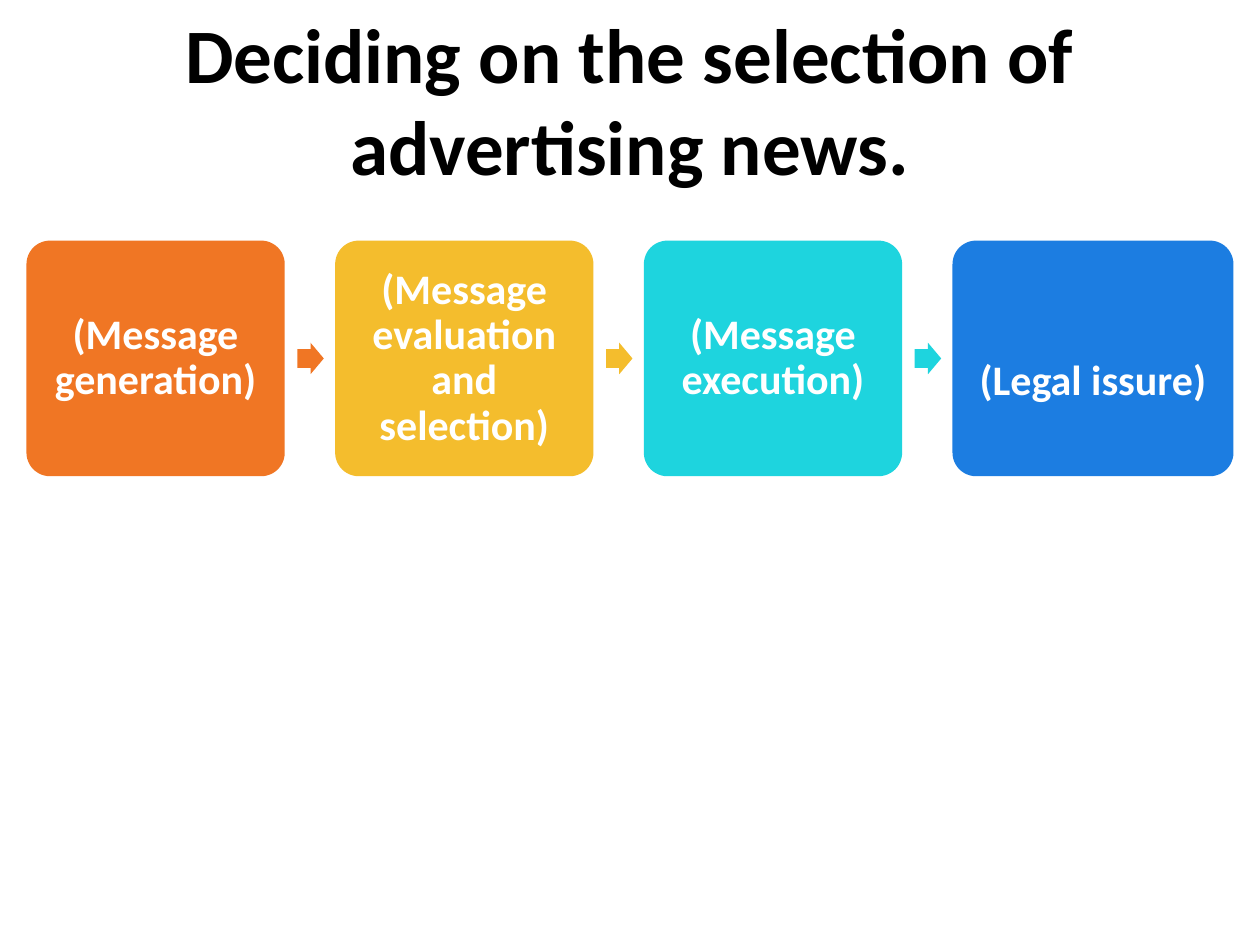
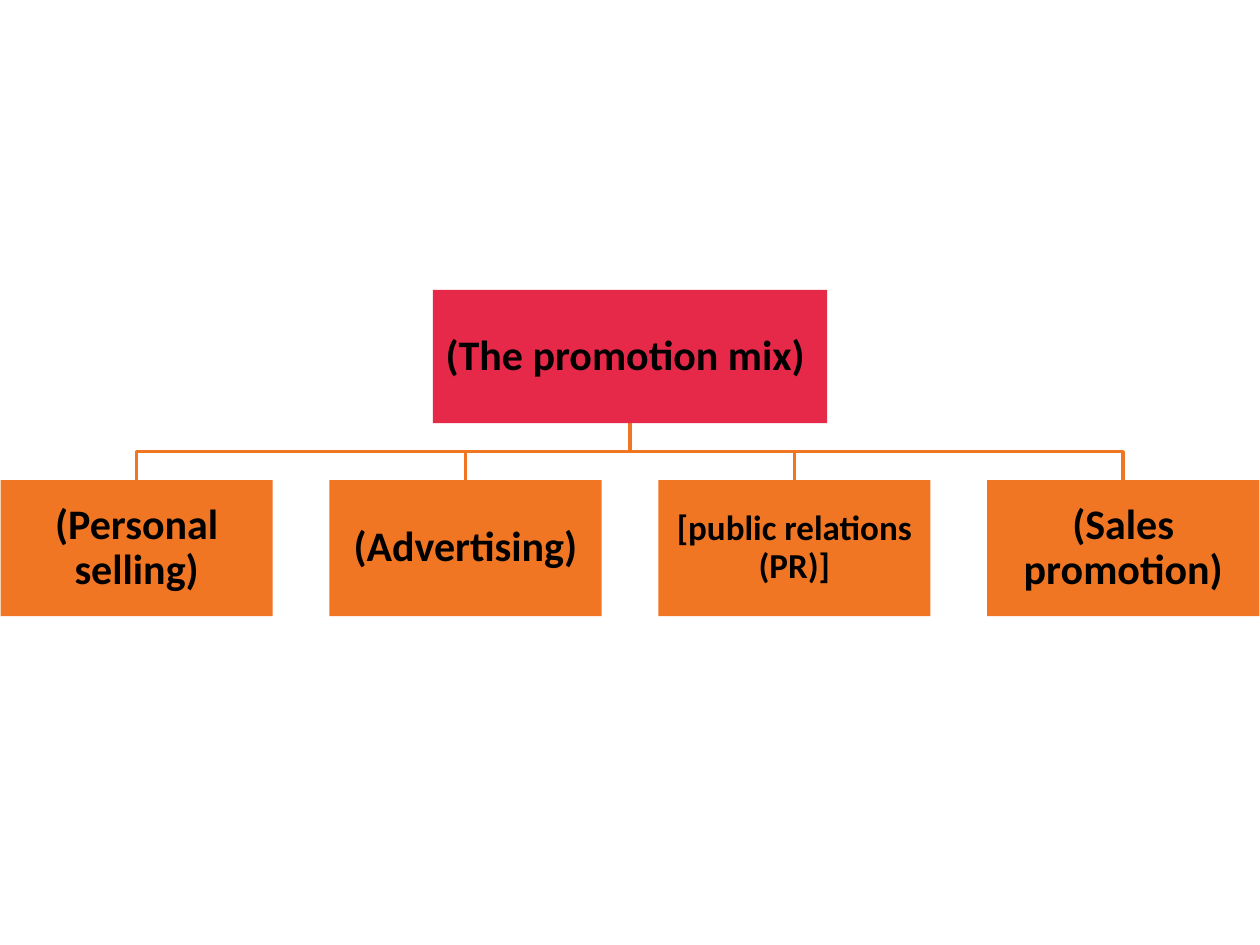
from pptx import Presentation
from pptx.dml.color import RGBColor
from pptx.enum.shapes import MSO_SHAPE
from pptx.enum.text import MSO_ANCHOR, PP_ALIGN
from pptx.util import Inches, Pt

TITLE = "Deciding on the selection of advertising news."
# label, colour, box width, extra space above the text
STEPS = [
    ("(Message generation)", "orange", 2.05, 0),
    ("(Message evaluation and selection)", "yellow", 2.05, 0),
    ("(Message execution)", "cyan", 2.05, 0),
    ("(Legal issure)", "blue", 2.23, 0.37),
]
MIX = "(The promotion mix) "
# label, text size
TOOLS = [
    ("(Personal selling)", 24),
    ("(Advertising)", 24),
    ("[public relations (PR)]", 20),
    ("(Sales promotion)", 24),
]

COLORS = {"orange": "F07624", "yellow": "F4BD2D", "cyan": "1ED4DE",
          "blue": "1C7DE1", "red": "E62949", "black": "000000", "white": "FFFFFF"}
FONT = "Calibri"
SLIDE_W, SLIDE_H = 10, 7.5

STEP_LEFT, STEP_TOP, STEP_H, STEP_PITCH = 0.21, 1.91, 1.87, 2.45
ARROW_W, ARROW_H, ARROW_GAP = 0.21, 0.25, 0.1

MIX_W, MIX_H, MIX_TOP = 3.13, 1.06, 2.3
TOOL_W, TOOL_H, TOOL_TOP, TOOL_PITCH = 2.16, 1.08, 3.81, 2.61
TOOL_LEFT = (SLIDE_W - TOOL_W - TOOL_PITCH * (len(TOOLS) - 1)) / 2


def rgb(name):
    return RGBColor.from_string(COLORS[name])


def write(shape, text, size, color, spacing=None):
    tf = shape.text_frame
    tf.word_wrap = True
    p = tf.paragraphs[0]
    p.text = text
    p.alignment = PP_ALIGN.CENTER
    p.line_spacing = spacing
    p.font.name, p.font.size, p.font.bold = FONT, Pt(size), True
    p.font.color.rgb = rgb(color)
    return tf


def add_block(s, kind, left, top, width, height, fill, adjustments=()):
    sp = s.shapes.add_shape(kind, *map(Inches, (left, top, width, height)))
    sp.shadow.inherit = False
    sp.fill.solid()
    sp.fill.fore_color.rgb = rgb(fill)
    sp.line.fill.background()
    for i, value in enumerate(adjustments):
        sp.adjustments[i] = value
    return sp


def add_label(sp, text, size, color, inset, extra_top=0):
    tf = write(sp, text, size, color, 0.9)
    tf.vertical_anchor = MSO_ANCHOR.MIDDLE
    tf.margin_left = tf.margin_right = tf.margin_bottom = Inches(inset)
    tf.margin_top = Inches(inset + extra_top)


def add_branch(s, x):
    """Draw the stepped line from the mix box down to a tool box centred at x."""
    start, end, middle = MIX_TOP + MIX_H, TOOL_TOP, SLIDE_W / 2
    bend = (start + end) / 2
    points = [(Inches(px), Inches(py)) for px, py in
              ((middle, start), (middle, bend), (x, bend), (x, end))]
    builder = s.shapes.build_freeform(*points[0])
    builder.add_line_segments(points[1:], close=False)
    sp = builder.convert_to_shape()
    sp.shadow.inherit = False
    sp.fill.background()
    sp.line.color.rgb = rgb("orange")
    sp.line.width = Pt(2)


def build_process(s):
    title = s.shapes.add_textbox(0, 0, Inches(SLIDE_W), Inches(0.84))
    write(title, TITLE, 44, "black")
    for i, (text, color, width, extra_top) in enumerate(STEPS):
        left = STEP_LEFT + i * STEP_PITCH
        box = add_block(s, MSO_SHAPE.ROUNDED_RECTANGLE, left, STEP_TOP,
                        width, STEP_H, color, [0.1])
        add_label(box, text, 24, "white", 0.1, extra_top)
        if i < len(STEPS) - 1:
            add_block(s, MSO_SHAPE.RIGHT_ARROW, left + width + ARROW_GAP,
                      STEP_TOP + (STEP_H - ARROW_H) / 2,
                      ARROW_W, ARROW_H, color, [0.6, 0.5])


def build_mix(s):
    lefts = [TOOL_LEFT + i * TOOL_PITCH for i in range(len(TOOLS))]
    for left in lefts:
        add_branch(s, left + TOOL_W / 2)
    box = add_block(s, MSO_SHAPE.RECTANGLE, (SLIDE_W - MIX_W) / 2, MIX_TOP,
                    MIX_W, MIX_H, "red")
    add_label(box, MIX, 24, "black", 0.02)
    for left, (text, size) in zip(lefts, TOOLS):
        box = add_block(s, MSO_SHAPE.RECTANGLE, left, TOOL_TOP, TOOL_W, TOOL_H, "orange")
        add_label(box, text, size, "black", 0.02)


def main():
    prs = Presentation()
    prs.slide_width, prs.slide_height = Inches(SLIDE_W), Inches(SLIDE_H)
    for build in (build_process, build_mix):
        build(prs.slides.add_slide(prs.slide_layouts[6]))
    prs.save("out.pptx")


if __name__ == "__main__":
    main()
